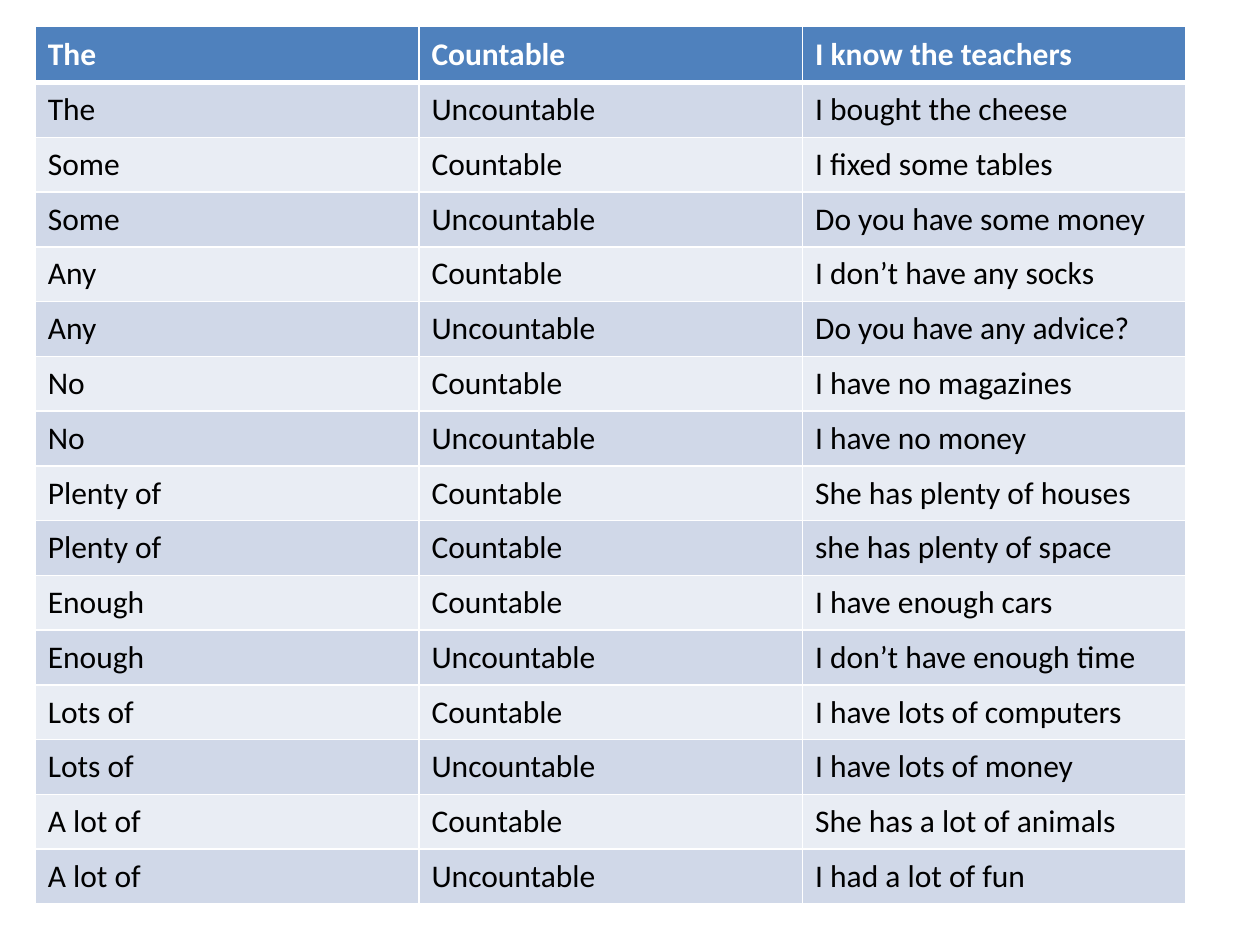
from lxml.etree import SubElement
from pptx import Presentation
from pptx.dml.color import RGBColor
from pptx.enum.text import MSO_ANCHOR
from pptx.oxml.ns import qn
from pptx.util import Pt

PX = 4572  # EMU per px, 200 px to the inch
THEME = {
    "font": "Calibri", "size": 18,
    "header": "4F81BD", "bands": ("E9EDF4", "D0D8E8"),
    "header_text": "FFFFFF", "body_text": "000000",
    "border": "FFFFFF", "thin": 1, "thick": 3,
}

ROWS = [
    ("The", "Countable", "I know the teachers"),
    ("The", "Uncountable", "I bought the cheese"),
    ("Some", "Countable", "I fixed some tables"),
    ("Some", "Uncountable", "Do you have some money"),
    ("Any", "Countable", "I don’t have any socks"),
    ("Any", "Uncountable", "Do you have any advice?"),
    ("No", "Countable", "I have no magazines"),
    ("No", "Uncountable", "I have no money"),
    ("Plenty of", "Countable", "She has plenty of houses"),
    ("Plenty of", "Countable", "she has plenty of space"),
    ("Enough", "Countable", "I have enough cars"),
    ("Enough", "Uncountable", "I don’t have enough time"),
    ("Lots of", "Countable", "I have lots of computers"),
    ("Lots of", "Uncountable", "I have lots of money"),
    ("A lot of", "Countable", "She has a lot of animals"),
    ("A lot of", "Uncountable", "I had a lot of fun"),
]
LEFT, TOP, COL_W, HEADER_H, ROW_H = 56, 42, 609, 89, 87


def add_border(cell, side, width):
    ln = SubElement(cell._tc.get_or_add_tcPr(), qn(f"a:ln{side}"), w=str(Pt(width)))
    fill = SubElement(ln, qn("a:solidFill"))
    SubElement(fill, qn("a:srgbClr"), val=THEME["border"])


prs = Presentation()
prs.slide_width, prs.slide_height = 2000 * PX, 1500 * PX
s = prs.slides.add_slide(prs.slide_layouts[6])

# Table grid
n_rows, n_cols = len(ROWS), len(ROWS[0])
height = HEADER_H + ROW_H * (n_rows - 1)
table = s.shapes.add_table(n_rows, n_cols, LEFT * PX, TOP * PX,
                           COL_W * n_cols * PX, height * PX).table
for col in table.columns:
    col.width = COL_W * PX
for i, row in enumerate(table.rows):
    row.height = (ROW_H if i else HEADER_H) * PX

# Cells: header row, then alternating bands
for i, texts in enumerate(ROWS):
    is_header = i == 0
    for j, text in enumerate(texts):
        cell = table.cell(i, j)
        for side in "LRTB":
            under_header = (i, side) in ((0, "B"), (1, "T"))
            add_border(cell, side, THEME["thick" if under_header else "thin"])
        cell.fill.solid()
        cell.fill.fore_color.rgb = RGBColor.from_string(
            THEME["header"] if is_header else THEME["bands"][i % 2])
        cell.vertical_anchor = MSO_ANCHOR.MIDDLE

        p = cell.text_frame.paragraphs[0]
        p.text = text
        r = p.runs[0]
        r.font.name, r.font.size = THEME["font"], Pt(THEME["size"])
        r.font.bold = is_header
        r.font.color.rgb = RGBColor.from_string(
            THEME["header_text" if is_header else "body_text"])

prs.save("out.pptx")
